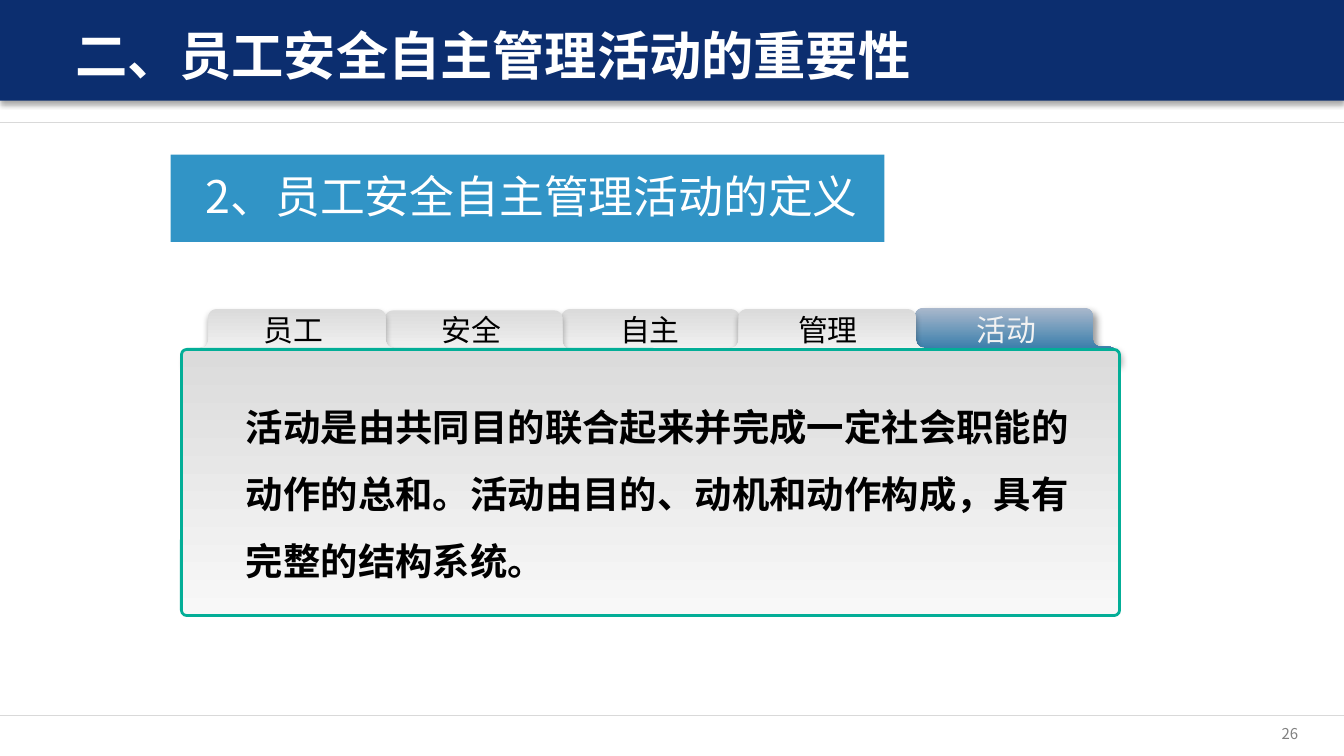
import math

from lxml import etree
from pptx import Presentation
from pptx import util as u
from pptx.dml.color import RGBColor
from pptx.enum import shapes, text
from pptx.oxml import ns

PX = 4572
FONT = "Noto Sans CJK SC"
WHITE = RGBColor(0xFF, 0xFF, 0xFF)
BLACK = RGBColor(0x00, 0x00, 0x00)
NAVY = RGBColor(0x0C, 0x2E, 0x6F)
SKY = RGBColor(0x31, 0x94, 0xC6)
TEAL = RGBColor(0x03, 0xAE, 0x97)
RULE_GRAY = RGBColor(0xD9, 0xD9, 0xD9)
NUMBER_GRAY = RGBColor(0x80, 0x80, 0x80)
ACTIVE_TEXT = RGBColor(0xF2, 0xF2, 0xF2)
TAB_TOP = RGBColor(0xDB, 0xDB, 0xDB)
TAB_BOTTOM = RGBColor(0xFA, 0xFA, 0xFA)
PANEL_BOTTOM = RGBColor(0xF8, 0xF8, 0xF8)
ACTIVE_TOP = RGBColor(0xAA, 0xB8, 0xCC)
ACTIVE_BOTTOM = RGBColor(0x12, 0x6A, 0xA0)

TABS = [("员工", 460), ("安全", 462), ("自主", 460), ("管理", 460), ("活动", 458)]
DRAW_ORDER = (4, 2, 1, 0, 3)
TAB_WIDTH, TAB_HEIGHT = 336, 82


def px(*lengths):
    """Turn px lengths into EMU."""
    return [u.Emu(length * PX) for length in lengths]


def paint_gradient(shape, top, bottom):
    """Fill a shape from top to bottom with two colours."""
    shape.fill.gradient()
    shape.fill.gradient_angle = 270
    for stop, color in zip(shape.fill.gradient_stops, (top, bottom)):
        stop.color.rgb = color


def cast_shadow(shape, opacity, blur, distance, angle):
    """Give a shape a black outer shadow."""
    shape.shadow.inherit = False
    effects = shape._element.spPr.find(ns.qn("a:effectLst"))
    shadow = etree.SubElement(
        effects, ns.qn("a:outerShdw"), blurRad=str(u.Pt(blur)),
        dist=str(u.Pt(distance)), dir=str(angle * 60000),
        algn="ctr", rotWithShape="0")
    color = etree.SubElement(shadow, ns.qn("a:srgbClr"), val=str(BLACK))
    etree.SubElement(color, ns.qn("a:alpha"), val=str(opacity * 1000))


def write(frame, words, size, color, bold=False, align=text.PP_ALIGN.LEFT,
          anchor=text.MSO_ANCHOR.TOP, inset=0, spacing=1.0):
    """Put one formatted paragraph in a text frame."""
    frame.word_wrap = True
    frame.auto_size = text.MSO_AUTO_SIZE.NONE
    frame.vertical_anchor = anchor
    frame.margin_left = frame.margin_right = u.Emu(inset * PX)
    frame.margin_top = frame.margin_bottom = u.Emu(inset * PX)
    paragraph = frame.paragraphs[0]
    paragraph.text = words
    paragraph.alignment = align
    paragraph.line_spacing = spacing
    font = paragraph.font
    font.size, font.bold, font.name = u.Pt(size), bold, FONT
    font.color.rgb = color
    properties = paragraph._p.pPr.find(ns.qn("a:defRPr"))
    etree.SubElement(properties, ns.qn("a:ea"), typeface=FONT)


def add_text(slide, box, words, size, color, **style):
    """Add a text box."""
    write(slide.shapes.add_textbox(*px(*box)).text_frame,
          words, size, color, **style)


def add_band(slide, box, color):
    """Add a flat rectangle without an outline."""
    band = slide.shapes.add_shape(shapes.MSO_SHAPE.RECTANGLE, *px(*box))
    band.shadow.inherit = False
    band.fill.solid()
    band.fill.fore_color.rgb = color
    band.line.fill.background()
    return band


def add_rule(slide, y):
    """Add a hairline across the slide."""
    rule = slide.shapes.add_connector(
        shapes.MSO_CONNECTOR.STRAIGHT, *px(0, y, 2000, y))
    rule.line.color.rgb = RULE_GRAY
    rule.line.width = u.Pt(0.25)
    etree.SubElement(rule._element.spPr, ns.qn("a:effectLst"))


def arc(x, y, start, end, radius=12, steps=6):
    """List the points of a circular arc."""
    angles = [math.radians(start + (end - start) * i / steps)
              for i in range(steps + 1)]
    return [(x + radius * math.cos(a), y + radius * math.sin(a))
            for a in angles]


def add_tab(slide, left, top, colors, shadow):
    """Add a folder tab with rounded shoulders and flared feet."""
    rising = [(0, TAB_HEIGHT), *arc(12, 70, 180, 270),
              *arc(24, 46, 90, 0), *arc(48, 12, 180, 270)]
    falling = [(TAB_WIDTH - x, y) for x, y in reversed(rising)]
    outline = [((left + x) * PX, (top + y) * PX) for x, y in rising + falling]
    builder = slide.shapes.build_freeform(*outline[0])
    builder.add_line_segments(outline[1:], close=True)
    tab = builder.convert_to_shape()
    tab.line.fill.background()
    paint_gradient(tab, *colors)
    cast_shadow(tab, *shadow)


def add_panel(slide):
    """Add the outlined panel under the tabs."""
    panel = slide.shapes.add_shape(
        shapes.MSO_SHAPE.ROUNDED_RECTANGLE, *px(270, 520, 1396, 396))
    panel.adjustments[0] = 0.02
    panel.shadow.inherit = False
    panel.line.color.rgb = TEAL
    panel.line.width = u.Pt(1.5)
    paint_gradient(panel, TAB_TOP, PANEL_BOTTOM)


def add_header(slide):
    """Add the header bar and the title on it."""
    cast_shadow(add_band(slide, (0, -10, 2000, 160), NAVY), 35, 3, 1.8, 90)
    title = slide.shapes.title
    slide.shapes._spTree.append(title._element)
    title.left, title.top, title.width, title.height = px(112, 34, 1708, 94)
    write(title.text_frame, "二、员工安全自主管理活动的重要性", 28, WHITE,
          bold=True, anchor=text.MSO_ANCHOR.MIDDLE)


def add_tabbed_panel(slide):
    """Add the five tabs, the panel and their wording."""
    active = len(TABS) - 1
    for i in DRAW_ORDER:
        if i == active:
            colors, shadow = (ACTIVE_TOP, ACTIVE_BOTTOM), (40, 4, 3, 45)
        else:
            colors, shadow = (TAB_TOP, TAB_BOTTOM), (32, 3.5, 2.2, 90)
        add_tab(slide, 274 + 263 * i, TABS[i][1], colors, shadow)
    add_panel(slide)
    for i, (label, _) in enumerate(TABS):
        add_text(slide, (308 + 265 * i, 460, 258, 60), label, 16,
                 ACTIVE_TEXT if i == active else BLACK,
                 align=text.PP_ALIGN.CENTER, anchor=text.MSO_ANCHOR.MIDDLE)
    add_text(slide, (366, 568, 1262, 200),
             "活动是由共同目的联合起来并完成一定社会职能的动作的总和。"
             "活动由目的、动机和动作构成，具有完整的结构系统。",
             20, BLACK, bold=True, spacing=1.5)


def main():
    """Build the slide and save it."""
    deck = Presentation()
    deck.slide_width, deck.slide_height = px(2000, 1125)
    slide = deck.slides.add_slide(deck.slide_layouts[5])
    for y in (182, 1064):
        add_rule(slide, y)
    add_header(slide)
    add_text(slide, (1850, 1078, 82, 28), "26", 8, NUMBER_GRAY,
             align=text.PP_ALIGN.RIGHT, anchor=text.MSO_ANCHOR.MIDDLE)
    add_band(slide, (254, 230, 1062, 130), SKY)
    add_text(slide, (296, 242, 1020, 106), "2、员工安全自主管理活动的定义",
             24, WHITE, inset=10)
    add_tabbed_panel(slide)
    deck.save("out.pptx")


if __name__ == "__main__":
    main()
